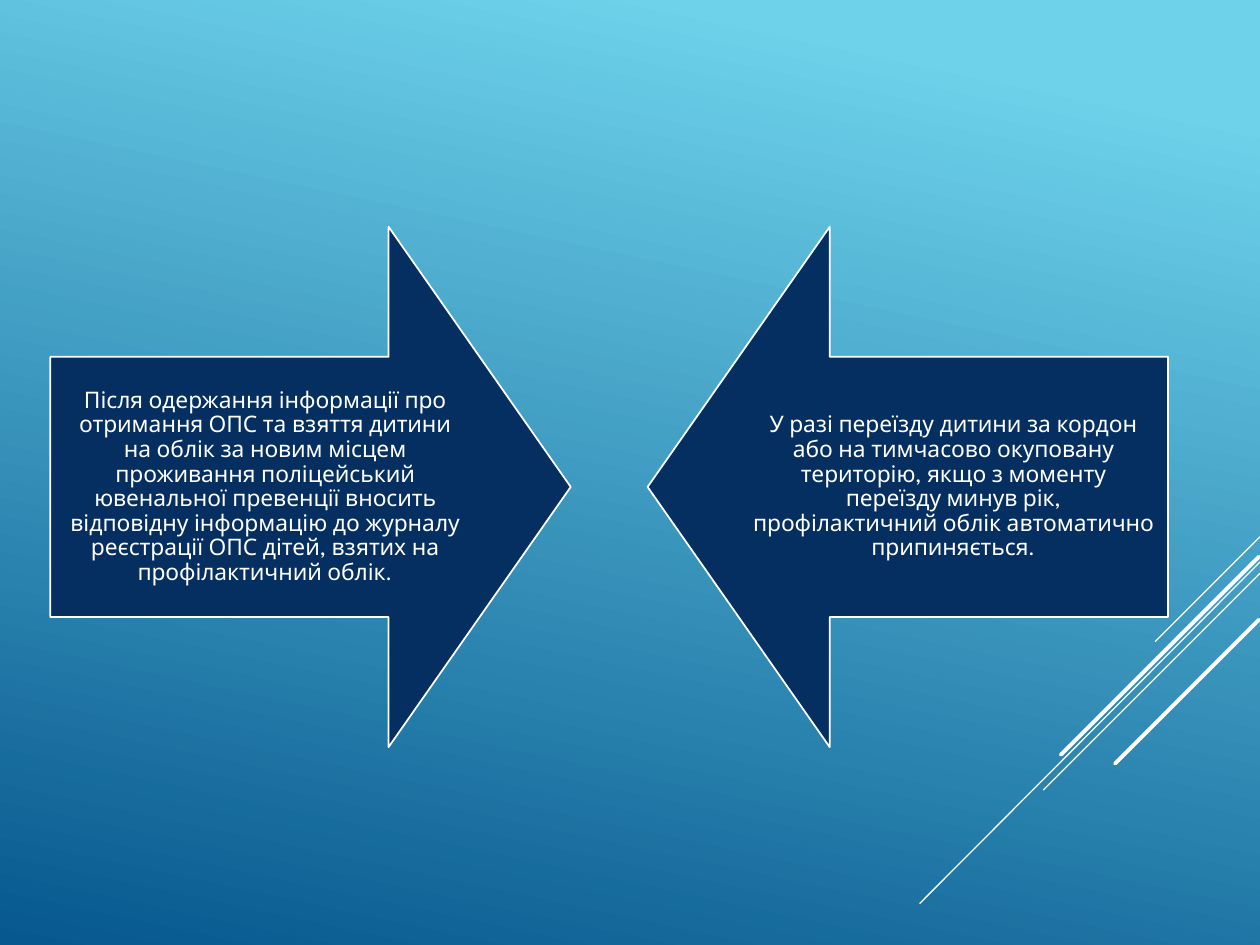
from pptx import Presentation
from pptx.dml.color import RGBColor
from pptx.enum import shapes, text
from pptx.oxml.ns import qn
from pptx.util import Inches, Pt

WHITE = RGBColor(0xFF, 0xFF, 0xFF)
NAVY = RGBColor(0x05, 0x2F, 0x61)
SKY = RGBColor(0x6E, 0xD2, 0xEB)
DEEP = RGBColor(0x06, 0x58, 0x8E)
FONT = "League Spartan"

ARROW_SIZE, ARROW_TOP = 4.13, 1.8
ARROWS = [
    (shapes.MSO_SHAPE.RIGHT_ARROW, 0.4,
     "Після одержання інформації про отримання ОПС та взяття дитини на облік "
     "за новим місцем проживання поліцейський ювенальної превенції вносить "
     "відповідну інформацію до журналу реєстрації ОПС дітей, взятих на "
     "профілактичний облік."),
    (shapes.MSO_SHAPE.LEFT_ARROW, 5.14,
     "У разі переїзду дитини за кордон або на тимчасово окуповану територію, "
     "якщо з моменту переїзду минув рік, профілактичний облік автоматично "
     "припиняється."),
]
STRIPES = [
    (10, 4.26, 9.17, 5.09, 0.75),
    (10, 4.46, 7.3, 7.17, 0.75),
    (10, 4.55, 8.28, 6.27, 0.75),
    (9.99, 4.42, 8.42, 5.99, 2.25),
    (9.99, 4.92, 8.85, 6.06, 2.25),
]


def set_background(s):
    fill = s.background.fill
    fill.gradient()
    fill.gradient_angle = 360 - 102
    for stop, position, color in zip(fill.gradient_stops, (0.1, 1), (SKY, DEEP)):
        stop.position = position
        stop.color.rgb = color


def add_stripe(s, x1, y1, x2, y2, width):
    line = s.shapes.add_connector(
        shapes.MSO_CONNECTOR.STRAIGHT, *map(Inches, (x1, y1, x2, y2)))
    line.line.color.rgb = WHITE
    line.line.width = Pt(width)
    line.line._get_or_add_ln().set("cap", "rnd")
    sp_pr = line._element.spPr
    sp_pr.append(sp_pr.makeelement(qn("a:effectLst"), {}))


def write_text(sp, words, size=13, color=WHITE, font=FONT, inset=0.1):
    tf = sp.text_frame
    tf.word_wrap = True
    tf.vertical_anchor = text.MSO_ANCHOR.MIDDLE
    tf.margin_left = tf.margin_right = Inches(inset)
    tf.margin_top = tf.margin_bottom = Inches(inset)
    p = tf.paragraphs[0]
    p.alignment = text.PP_ALIGN.CENTER
    p.line_spacing = 0.9
    r = p.add_run()
    r.text = words
    r.font.size = Pt(size)
    r.font.name = font
    r.font.color.rgb = color


def add_arrow(s, kind, left, words):
    sp = s.shapes.add_shape(
        kind, *map(Inches, (left, ARROW_TOP, ARROW_SIZE, ARROW_SIZE)))
    sp.adjustments[0] = 0.5
    sp.adjustments[1] = 0.35
    sp.shadow.inherit = False
    sp.fill.solid()
    sp.fill.fore_color.rgb = NAVY
    sp.line.color.rgb = WHITE
    sp.line.width = Pt(1)
    write_text(sp, words)


def main():
    prs = Presentation()
    prs.slide_width, prs.slide_height = Inches(10), Inches(7.5)
    s = prs.slides.add_slide(prs.slide_layouts[6])
    set_background(s)
    for stripe in STRIPES:
        add_stripe(s, *stripe)
    for arrow in ARROWS:
        add_arrow(s, *arrow)
    prs.save("out.pptx")


if __name__ == "__main__":
    main()
